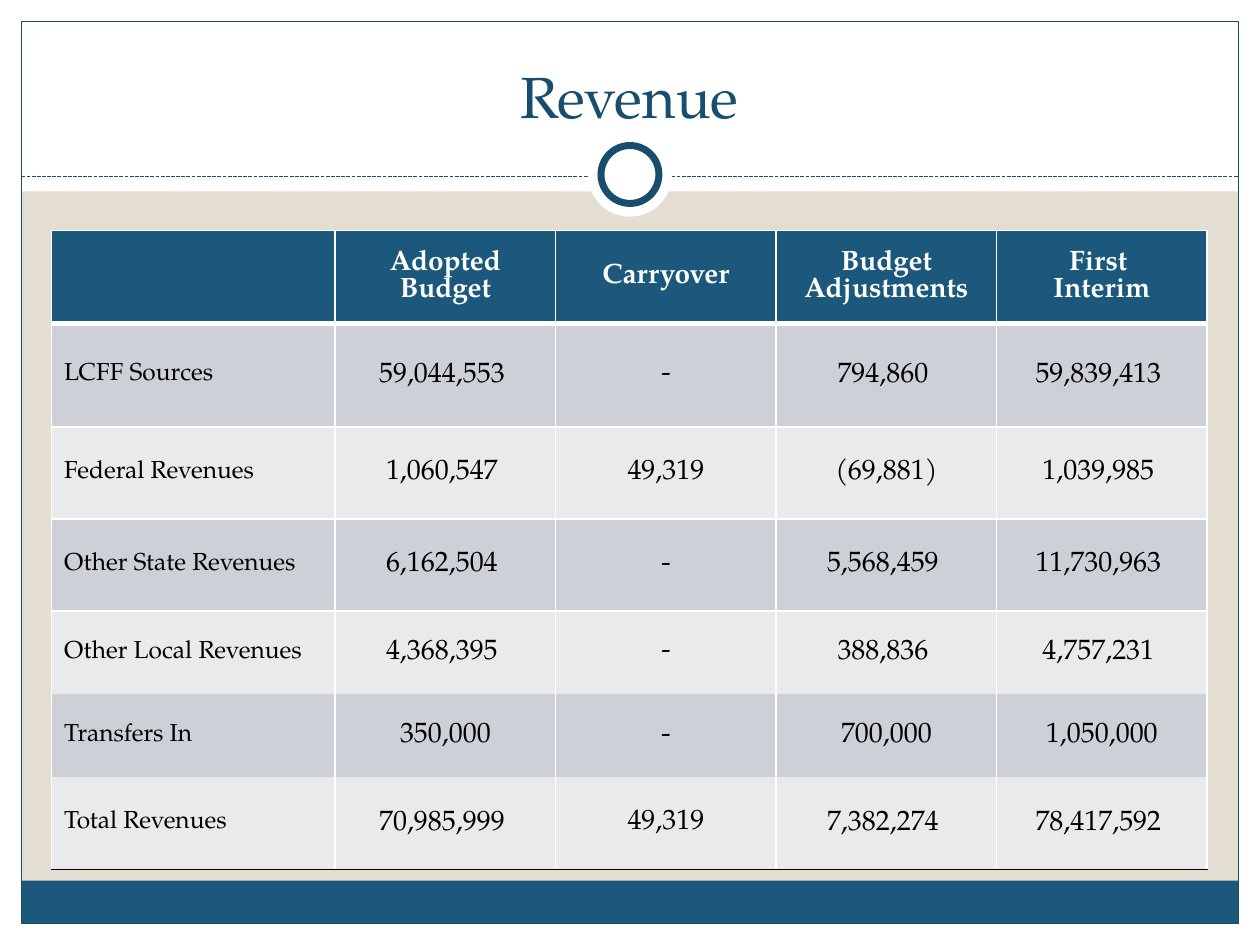
import collections
import dataclasses

import pptx
import pptx.dml.color
import pptx.enum.dml
import pptx.enum.shapes
import pptx.enum.text
import pptx.oxml
import pptx.oxml.ns
import pptx.util

Inches, Pt = pptx.util.Inches, pptx.util.Pt
SHAPE = pptx.enum.shapes.MSO_SHAPE
ALIGN = pptx.enum.text.PP_ALIGN
ANCHOR = pptx.enum.text.MSO_ANCHOR
Box = collections.namedtuple("Box", "x y w h")


@dataclasses.dataclass(frozen=True)
class Theme:
    font: str = "TeX Gyre Pagella"
    sand: str = "E3DED1"
    white: str = "FFFFFF"
    black: str = "000000"
    blue: str = "1B587C"
    navy: str = "184E6D"
    bands: tuple = ("CDD1D7", "E8EAEC")
    title: int = 33
    value: int = 16
    label: int = 14


THEME = Theme()
COLS = (2.25, 1.75, 1.75, 1.75, 1.67)
ROWS = (0.74, 0.82, 0.73, 0.73, 0.66, 0.66, 0.73)
HEADS = ("", "Adopted\nBudget", "Carryover", "Budget Adjustments", "First \nInterim")
BODY = (
    ("LCFF Sources", "59,044,553 ", "-", "794,860 ", "59,839,413 "),
    ("Federal Revenues", "1,060,547 ", "49,319", "(69,881)", "1,039,985 "),
    ("Other State Revenues", "6,162,504 ", "-", "5,568,459 ", "11,730,963 "),
    ("Other Local Revenues", "4,368,395 ", "-", "388,836 ", "4,757,231 "),
    ("Transfers In", "350,000", "-", "700,000", "1,050,000"),
    ("Total Revenues", "70,985,999 ", "49,319", "7,382,274 ", "78,417,592 "),
)


def rgb(code):
    return pptx.dml.color.RGBColor.from_string(code)


def paint(slide, kind, box, fill=None, line=None, width=0.75):
    shape = slide.shapes.add_shape(kind, *map(Inches, box))
    shape.shadow.inherit = False
    if fill:
        shape.fill.solid()
        shape.fill.fore_color.rgb = rgb(fill)
    else:
        shape.fill.background()
    if line:
        shape.line.color.rgb = rgb(line)
        shape.line.width = Pt(width)
    else:
        shape.line.fill.background()


def style(para, size, color, align, bold=False):
    para.alignment = align
    font = para.font
    font.name, font.size, font.bold = THEME.font, Pt(size), bold
    font.color.rgb = rgb(color)


def frame(slide, box):
    """White margins, foot band and outline around the whole slide."""
    x, y, w, h = box
    edge, head, foot = 0.17, 1.52, 0.34
    for part in (
        Box(x, y + h - edge, w, edge),
        Box(x, y, w, head),
        Box(x, y, edge, h),
        Box(x + w - edge, y, edge, h),
    ):
        paint(slide, SHAPE.RECTANGLE, part, THEME.white)
    inner = Box(x + edge, y + edge, w - 2 * edge, h - 2 * edge)
    band = Box(inner.x, y + h - edge - foot, inner.w, foot)
    paint(slide, SHAPE.RECTANGLE, band, THEME.blue)
    paint(slide, SHAPE.RECTANGLE, inner, line=THEME.navy)


def divider(slide, box):
    """Dashed rule with a ring in the middle of the box."""
    x, y, w, h = box
    rule = slide.shapes.add_connector(
        pptx.enum.shapes.MSO_CONNECTOR.STRAIGHT,
        Inches(x), Inches(y + 0.35), Inches(x + w), Inches(y + 0.35),
    )
    rule.line.color.rgb = rgb(THEME.navy)
    rule.line.width = Pt(0.75)
    rule.line.dash_style = pptx.enum.dml.MSO_LINE.SQUARE_DOT
    props = rule._element.spPr
    props.append(pptx.oxml.parse_xml(f"<a:effectLst {pptx.oxml.ns.nsdecls('a')}/>"))
    for size, line in ((h, None), (0.46, THEME.navy)):
        ring = Box(x + (w - size) / 2, y + (h - size) / 2, size, size)
        paint(slide, SHAPE.OVAL, ring, THEME.white, line, 4)


def heading(slide, box, text):
    body = slide.shapes.add_textbox(*map(Inches, box)).text_frame
    body.word_wrap = True
    body.vertical_anchor = ANCHOR.BOTTOM
    body.text = text
    style(body.paragraphs[0], THEME.title, THEME.navy, ALIGN.CENTER)


def border(cell, side, color, width):
    """Draw one cell edge; no color hides it."""
    ink = f'<a:solidFill><a:srgbClr val="{color}"/></a:solidFill>' if color else "<a:noFill/>"
    cell._tc.get_or_add_tcPr().append(pptx.oxml.parse_xml(
        f'<a:ln{side} {pptx.oxml.ns.nsdecls("a")} w="{Pt(width)}">{ink}</a:ln{side}>'
    ))


def edges(row):
    """Yield side, color and width for the cells of a row."""
    last = len(BODY)
    yield "L", THEME.white, 1
    yield "R", THEME.white, 1
    yield "T", THEME.white if row < last - 1 else None, 1
    if row == last:
        yield "B", THEME.black, 1
    else:
        yield "B", THEME.white if row < last - 2 else None, 1 if row else 3


def entry(cell, row, col, text):
    for edge in edges(row):
        border(cell, *edge)
    cell.fill.solid()
    cell.fill.fore_color.rgb = rgb(THEME.bands[(row - 1) % 2] if row else THEME.blue)
    cell.vertical_anchor = ANCHOR.MIDDLE
    if row and col in (1, 3, 4):
        cell.margin_left = cell.margin_right = cell.margin_top = Inches(0.01)
        cell.margin_bottom = 0
    cell.text = text
    for para in cell.text_frame.paragraphs:
        if not row:
            style(para, THEME.value, THEME.white, ALIGN.CENTER, True)
        elif col:
            style(para, THEME.value, THEME.black, ALIGN.CENTER)
        else:
            style(para, THEME.label, THEME.black, ALIGN.LEFT)


def budget(slide, box):
    table = slide.shapes.add_table(len(ROWS), len(COLS), *map(Inches, box)).table
    for column, width in zip(table.columns, COLS):
        column.width = Inches(width)
    for line, height in zip(table.rows, ROWS):
        line.height = Inches(height)
    for row, texts in enumerate((HEADS, *BODY)):
        for col, text in enumerate(texts):
            entry(table.cell(row, col), row, col, text)


def main():
    deck = pptx.Presentation()
    deck.slide_width, deck.slide_height = Inches(10), Inches(7.5)
    slide = deck.slides.add_slide(deck.slide_layouts[6])
    slide.background.fill.solid()
    slide.background.fill.fore_color.rgb = rgb(THEME.sand)
    frame(slide, Box(0, 0, 10, 7.5))
    divider(slide, Box(0.17, 1.05, 9.66, 0.67))
    heading(slide, Box(0.33, 0.25, 9.33, 0.83), "Revenue")
    budget(slide, Box(0.41, 1.83, sum(COLS), sum(ROWS)))
    deck.save("out.pptx")


if __name__ == "__main__":
    main()
